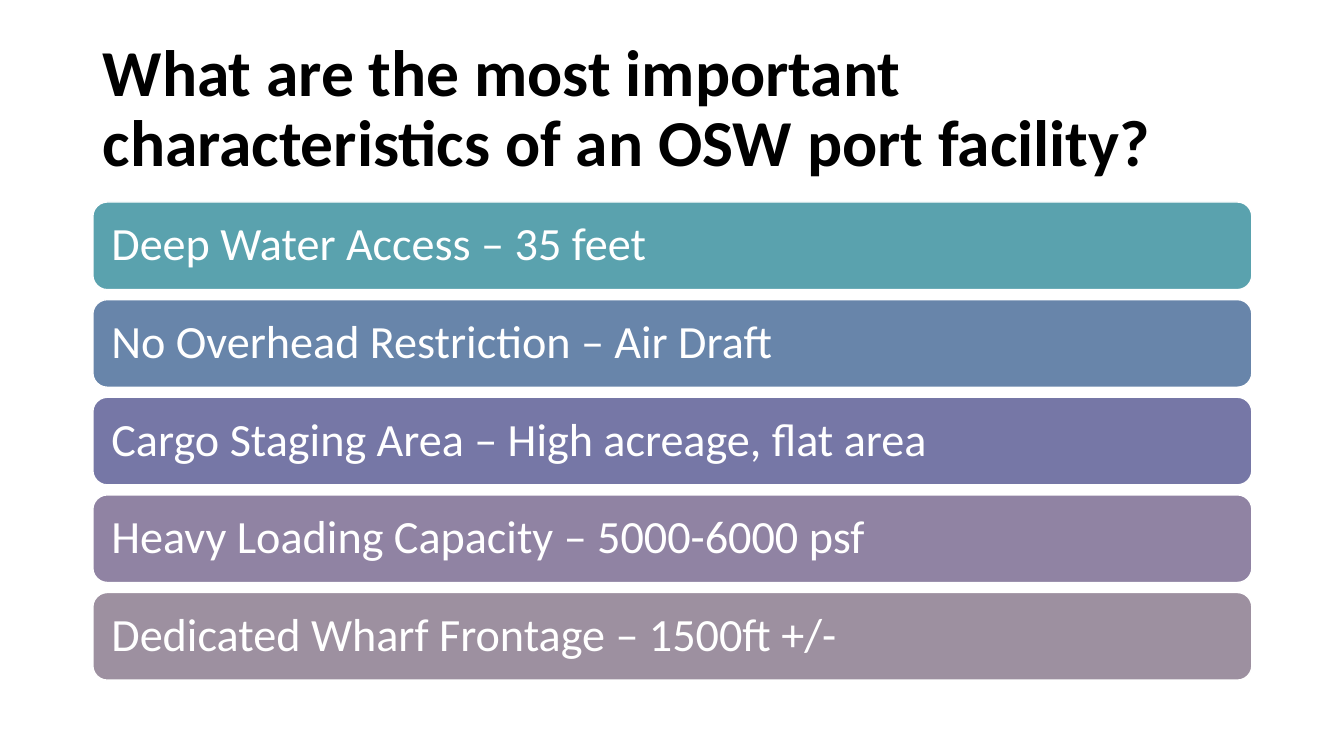
from dataclasses import dataclass

from pptx import Presentation
from pptx.dml.color import RGBColor
from pptx.enum.shapes import MSO_SHAPE
from pptx.enum.text import MSO_ANCHOR, PP_ALIGN
from pptx.util import Cm, Pt

ROUNDED = MSO_SHAPE.ROUNDED_RECTANGLE
MIDDLE = MSO_ANCHOR.MIDDLE
LEFT = PP_ALIGN.LEFT


@dataclass(frozen=True)
class Theme:
    font: str = "Calibri"
    title_size: float = 46.8
    bar_size: float = 33
    line_spacing: float = 0.9
    black: str = "000000"
    white: str = "FFFFFF"
    bars: tuple = ("5AA2AE", "6885AA", "7677A6", "9083A3", "9D90A0")


class SlideBuilder:
    """Holds the theme and the slide being drawn."""

    def __init__(self, slide, theme):
        self.slide = slide
        self.theme = theme

    def add_text(self, shape, text, size, color, bold=False):
        frame = shape.text_frame
        frame.word_wrap = True
        frame.vertical_anchor = MIDDLE
        paragraph = frame.paragraphs[0]
        paragraph.alignment = LEFT
        paragraph.line_spacing = self.theme.line_spacing
        run = paragraph.add_run()
        run.text = text
        run.font.name = self.theme.font
        run.font.size = Pt(size)
        run.font.bold = bold
        run.font.color.rgb = RGBColor.from_string(color)

    def add_title(self, text, left, top, width, height):
        box = self.slide.shapes.add_textbox(Cm(left), Cm(top), Cm(width), Cm(height))
        self.add_text(box, text, self.theme.title_size, self.theme.black, bold=True)

    def add_bar(self, text, fill, left, top, width, height):
        shape = self.slide.shapes.add_shape(
            ROUNDED, Cm(left), Cm(top), Cm(width), Cm(height))
        shape.shadow.inherit = False
        shape.fill.solid()
        shape.fill.fore_color.rgb = RGBColor.from_string(fill)
        shape.line.color.rgb = RGBColor.from_string(self.theme.white)
        shape.line.width = Pt(1)
        frame = shape.text_frame
        frame.margin_left = frame.margin_right = Cm(0.36)
        frame.margin_top = frame.margin_bottom = Cm(0.36)
        self.add_text(shape, text, self.theme.bar_size, self.theme.white)


CHARACTERISTICS = (
    "Deep Water Access – 35 feet",
    "No Overhead Restriction – Air Draft",
    "Cargo Staging Area – High acreage, flat area",
    "Heavy Loading Capacity – 5000-6000 psf",
    "Dedicated Wharf Frontage – 1500ft +/-",
)
MARGIN, CONTENT_WIDTH = 2.34, 29.21
FIRST_BAR_TOP, BAR_HEIGHT, BAR_PITCH = 5.09, 2.21, 2.46


def main():
    presentation = Presentation()
    presentation.slide_width = Cm(33.87)
    presentation.slide_height = Cm(19.05)
    theme = Theme()
    slide = presentation.slides.add_slide(presentation.slide_layouts[6])
    builder = SlideBuilder(slide, theme)

    # Title
    builder.add_title("What are the most important characteristics of an OSW port facility?",
                      MARGIN, 0.86, CONTENT_WIDTH, 3.84)

    # One bar per characteristic
    for index, (text, fill) in enumerate(zip(CHARACTERISTICS, theme.bars)):
        builder.add_bar(text, fill, MARGIN, FIRST_BAR_TOP + index * BAR_PITCH,
                        CONTENT_WIDTH, BAR_HEIGHT)

    presentation.save("out.pptx")


if __name__ == "__main__":
    main()
